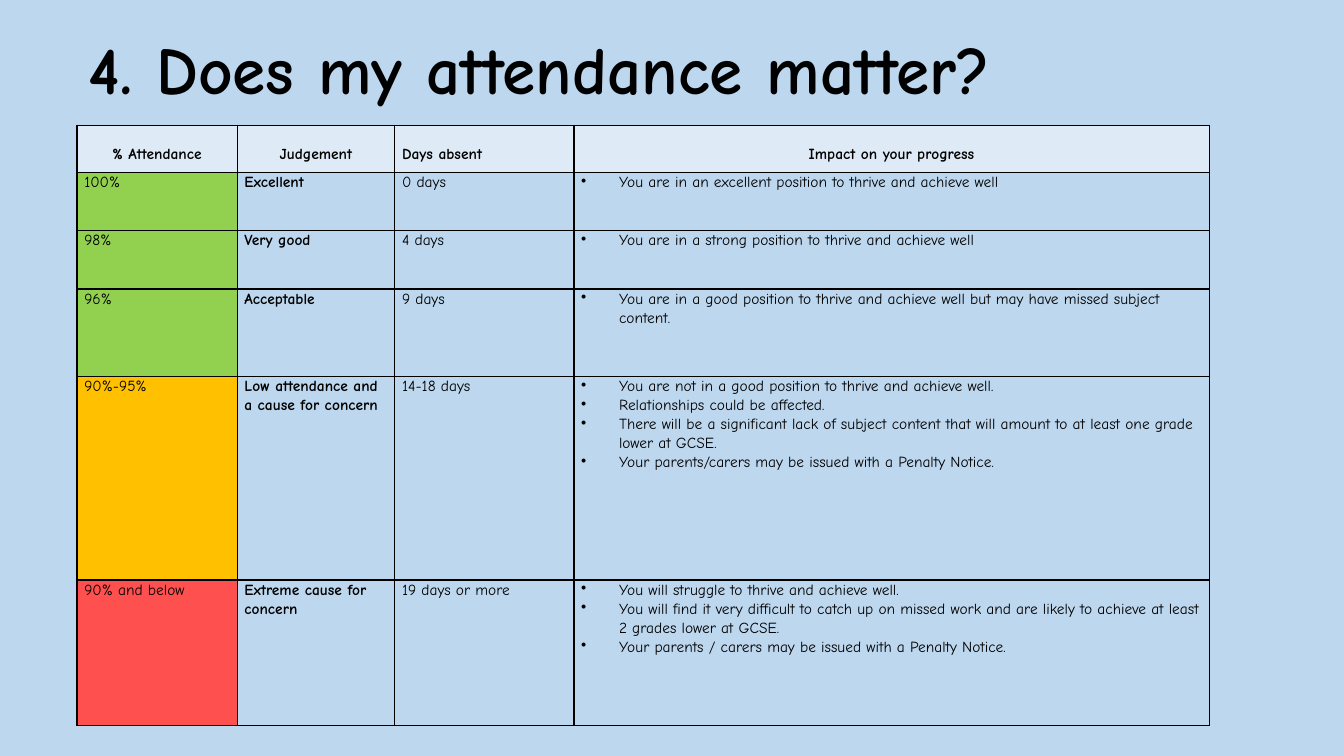
from lxml.etree import SubElement
from pptx import Presentation
from pptx.dml.color import RGBColor
from pptx.enum.text import MSO_AUTO_SIZE as AutoSize, PP_ALIGN as Align
from pptx.oxml.ns import qn
from pptx.util import Pt

SKY = RGBColor(0xBD, 0xD7, 0xEE)
PALE = RGBColor(0xDE, 0xEA, 0xF6)
GREEN = RGBColor(0x92, 0xD0, 0x50)
AMBER = RGBColor(0xFF, 0xC0, 0x00)
RED = RGBColor(0xFF, 0x50, 0x50)
BLACK = RGBColor(0x00, 0x00, 0x00)

COL_WIDTHS = [114.4, 112.6, 128, 453.8]
ROW_HEIGHTS = [33.8, 41.6, 41.6, 62.4, 145.5, 104]
HEADERS = ["% Attendance", "Judgement", "Days absent", "Impact on your progress"]
BANDS = [
    (GREEN, "100%", "Excellent", "0 days",
     ["You are in an excellent position to thrive and achieve well"]),
    (GREEN, "98%", "Very good", "4 days",
     ["You are in a strong position to thrive and achieve well"]),
    (GREEN, "96%", "Acceptable", "9 days",
     ["You are in a good position to thrive and achieve well but may have "
      "missed subject content."]),
    (AMBER, "90%-95%", "Low attendance and a cause for concern", "14-18 days",
     ["You are not in a good position to thrive and achieve well.",
      "Relationships could be affected.",
      "There will be a significant lack of subject content that will amount "
      "to at least one grade lower at GCSE.",
      "Your parents/carers may be issued with a Penalty Notice."]),
    (RED, "90% and below", "Extreme cause for concern", "19 days or more",
     ["You will struggle to thrive and achieve well.",
      "You will find it very difficult to catch up on missed work and are "
      "likely to achieve at least 2 grades lower at GCSE.",
      "Your parents / carers may be issued with a Penalty Notice."]),
]


class SlideBuilder:
    font = "Comic Neue"
    body_size = 11
    line_spacing = 1.07
    bullet_indent = 27

    def __init__(self, s):
        self.s = s

    def background(self, color):
        fill = self.s.background.fill
        fill.solid()
        fill.fore_color.rgb = color

    def style(self, p, size, bold):
        for r in p.runs:
            r.font.name = self.font
            r.font.size = Pt(size)
            r.font.bold = bold
            r.font.color.rgb = BLACK

    def title(self, text, x, y, w, h):
        tf = self.s.shapes.add_textbox(Pt(x), Pt(y), Pt(w), Pt(h)).text_frame
        tf.word_wrap = True
        tf.auto_size = AutoSize.SHAPE_TO_FIT_TEXT
        tf.text = text
        self.style(tf.paragraphs[0], 48, True)

    def table(self, x, y, widths, heights):
        frame = self.s.shapes.add_table(
            len(heights), len(widths), Pt(x), Pt(y), Pt(sum(widths)), Pt(sum(heights)))
        table = frame.table
        table.first_row = table.horz_banding = False
        for column, width in zip(table.columns, widths):
            column.width = Pt(width)
        for row, height in zip(table.rows, heights):
            row.height = Pt(height)
        return table

    def cell(self, cell, lines, fill=None, bold=False, align=Align.LEFT,
             top=0, bullets=False):
        cell.margin_left = cell.margin_right = Pt(5.2)
        cell.margin_top, cell.margin_bottom = Pt(top), Pt(0)
        self.borders(cell)
        if fill is None:
            cell.fill.background()
        else:
            cell.fill.solid()
            cell.fill.fore_color.rgb = fill
        cell.text_frame.text = "\n".join(lines)
        for p in cell.text_frame.paragraphs:
            p.alignment = align
            p.line_spacing = self.line_spacing
            self.style(p, self.body_size, bold)
            if bullets:
                self.bullet(p)

    def borders(self, cell):
        tcPr = cell._tc.get_or_add_tcPr()
        for side in ("L", "R", "T", "B"):
            ln = SubElement(tcPr, qn(f"a:ln{side}"), w=str(Pt(1)))
            fill = SubElement(ln, qn("a:solidFill"))
            SubElement(fill, qn("a:srgbClr"), val=str(BLACK))

    def bullet(self, p):
        pPr = p._p.get_or_add_pPr()
        pPr.set("marL", str(Pt(self.bullet_indent)))
        pPr.set("indent", str(-Pt(self.bullet_indent)))
        SubElement(pPr, qn("a:buChar"), char="•")


def main():
    prs = Presentation()
    prs.slide_width, prs.slide_height = Pt(960), Pt(540)
    b = SlideBuilder(prs.slides.add_slide(prs.slide_layouts[6]))
    b.background(SKY)

    table = b.table(55, 89.4, COL_WIDTHS, ROW_HEIGHTS)
    for i, header in enumerate(HEADERS):
        align = Align.LEFT if header == "Days absent" else Align.CENTER
        b.cell(table.cell(0, i), [header], PALE, True, align, top=13.7)
    for i, (color, attendance, judgement, days, impact) in enumerate(BANDS, 1):
        b.cell(table.cell(i, 0), [attendance], color)
        b.cell(table.cell(i, 1), [judgement], bold=True)
        b.cell(table.cell(i, 2), [days])
        b.cell(table.cell(i, 3), impact, bullets=True)

    b.title("4. Does my attendance matter?", 56.2, 15.8, 795, 65.5)
    prs.save("out.pptx")


if __name__ == "__main__":
    main()
